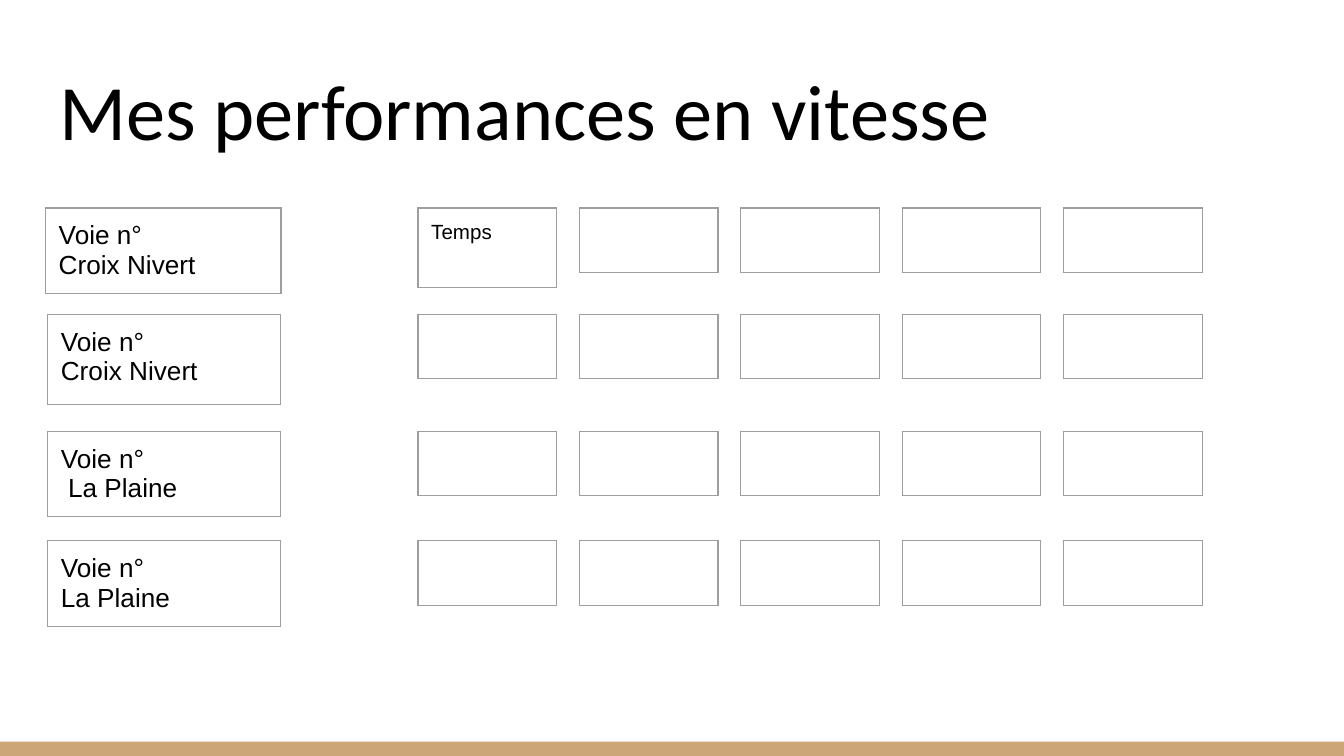
from dataclasses import dataclass

from lxml.etree import SubElement
from pptx import Presentation
from pptx.dml.color import RGBColor
from pptx.enum.shapes import MSO_SHAPE as Shape
from pptx.enum.text import MSO_ANCHOR as Anchor, PP_ALIGN as Align
from pptx.oxml.ns import qn
from pptx.util import Cm, Pt


@dataclass(frozen=True)
class Theme:
    text: str = "000000"
    border: str = "9E9E9E"
    band: str = "CCA677"
    title_font: str = "Calibri"
    body_font: str = "Arial"
    title_size: float = 42
    lane_size: float = 14
    time_size: float = 11
    border_width: float = 0.75


THEME = Theme()
INSET = Cm(0.25)

# Each lane: left, top and label width and height in cm, then its wording
LANES = [
    (0.86, 3.93, 4.45, 1.62, ["Voie n°", "Croix Nivert"]),
    (0.9, 5.94, 4.4, 1.7, ["Voie n°", "Croix Nivert"]),
    (0.9, 8.15, 4.4, 1.62, ["Voie n°", " La Plaine"]),
    (0.9, 10.22, 4.4, 1.62, ["Voie n°", "La Plaine"]),
]
TIME_COUNT, TIME_LEFT, TIME_PITCH = 5, 7.9, 3.05
TIME_WIDTH, TIME_HEIGHT, HEADED_HEIGHT = 2.62, 1.22, 1.5


def set_attributes(target, values):
    for name, value in values.items():
        setattr(target, name, value)


def format_font(font, name, size):
    set_attributes(font, {"name": name, "size": Pt(size), "bold": False})
    font.color.rgb = RGBColor.from_string(THEME.text)


def add_borders(cell):
    properties = cell._tc.get_or_add_tcPr()
    for side in ("lnL", "lnR", "lnT", "lnB"):
        line = SubElement(properties, qn(f"a:{side}"),
                          w=str(Pt(THEME.border_width)))
        fill = SubElement(line, qn("a:solidFill"))
        SubElement(fill, qn("a:srgbClr"), val=THEME.border)


def add_box(slide, box, lines=(), size=THEME.lane_size):
    """One-cell table with a thin border."""
    table = slide.shapes.add_table(1, 1, *map(Cm, box)).table
    set_attributes(table, {"first_row": False, "horz_banding": False})
    cell = table.cell(0, 0)
    add_borders(cell)
    cell.fill.background()
    set_attributes(cell, {"margin_left": INSET, "margin_right": INSET})
    if lines:
        set_attributes(cell, {"margin_top": INSET, "margin_bottom": INSET})
        cell.text = "\n".join(lines)
        for paragraph in cell.text_frame.paragraphs:
            format_font(paragraph.runs[0].font, THEME.body_font, size)


def add_title(slide, box, text):
    title = slide.shapes.title
    left, top, width, height = map(Cm, box)
    set_attributes(title, {"left": left, "top": top,
                           "width": width, "height": height})
    frame = title.text_frame
    frame.text = text
    set_attributes(frame, {
        "margin_left": INSET, "margin_right": INSET, "margin_top": INSET,
        "margin_bottom": INSET, "vertical_anchor": Anchor.BOTTOM,
        "word_wrap": True,
    })
    paragraph = frame.paragraphs[0]
    paragraph.alignment = Align.LEFT
    format_font(paragraph.runs[0].font, THEME.title_font, THEME.title_size)


def add_band(slide, box):
    band = slide.shapes.add_shape(Shape.RECTANGLE, *map(Cm, box))
    band.shadow.inherit = False
    band.fill.solid()
    band.fill.fore_color.rgb = RGBColor.from_string(THEME.band)
    band.line.fill.background()


def add_lane(slide, box, lines, headed):
    """Lane label followed by its row of time boxes."""
    add_box(slide, box, lines)
    for column in range(TIME_COUNT):
        with_heading = headed and column == 0
        height = HEADED_HEIGHT if with_heading else TIME_HEIGHT
        time_box = (TIME_LEFT + column * TIME_PITCH, box[1],
                    TIME_WIDTH, height)
        add_box(slide, time_box, ["Temps"] if with_heading else (),
                THEME.time_size)


def main():
    presentation = Presentation()
    set_attributes(presentation, {"slide_width": Cm(25.4),
                                  "slide_height": Cm(14.29)})
    title_only = presentation.slide_layouts[5]
    slide = presentation.slides.add_slide(title_only)

    # Footer band and title
    add_band(slide, (0, 14.02, 25.4, 0.27))
    add_title(slide, (0.87, 0.9, 23.67, 2.3), "Mes performances en vitesse")

    # Lanes
    for index, (*box, lines) in enumerate(LANES):
        add_lane(slide, box, lines, headed=index == 0)

    presentation.save("out.pptx")


if __name__ == "__main__":
    main()
